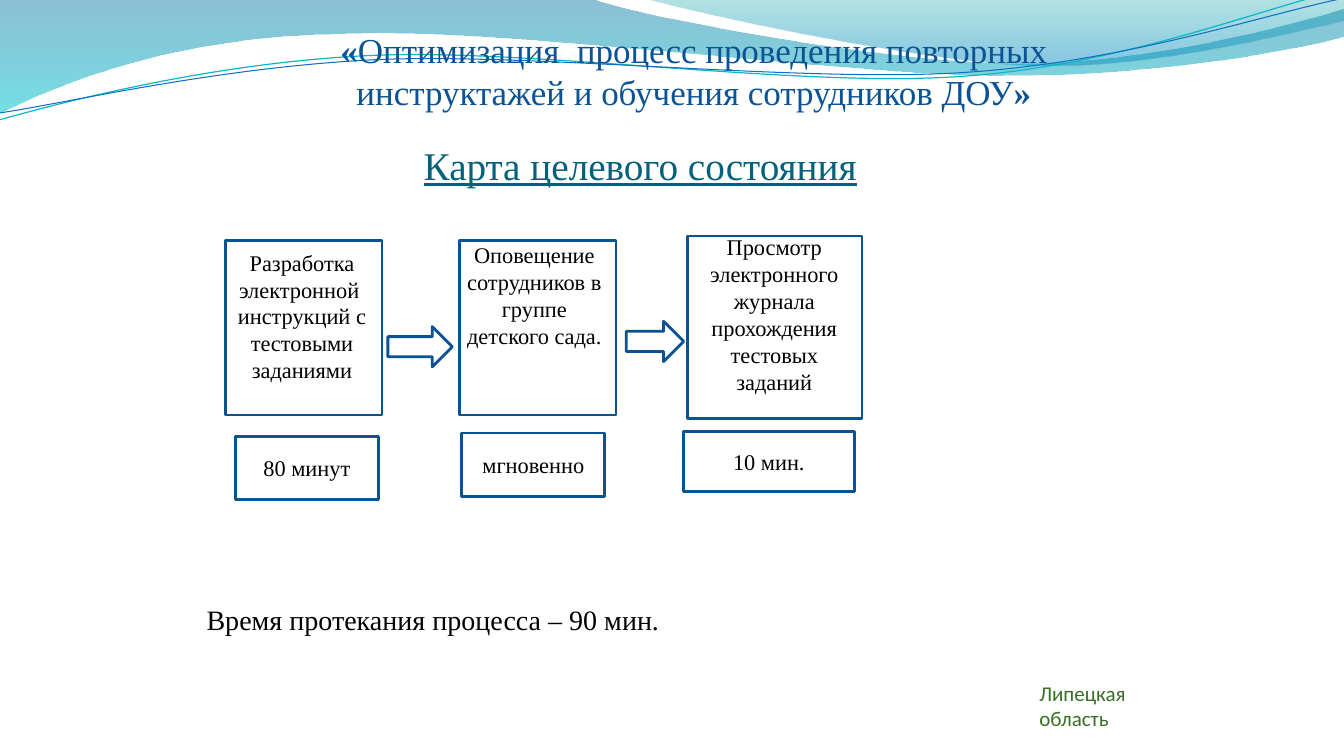
import math
from dataclasses import dataclass

from lxml import etree
from pptx import Presentation
from pptx import util as u
from pptx.dml.color import RGBColor
from pptx.enum import shapes, text
from pptx.oxml.ns import qn


@dataclass(frozen=True)
class Theme:
    serif: str = "Times New Roman"
    sans: str = "Calibri"
    ink: str = "000000"
    frame: str = "0B5292"
    title: str = "0B5394"
    heading: str = "04617B"
    region: str = "387026"
    paper: str = "FFFFFF"
    title_size: int = 25
    heading_size: int = 28
    total_size: int = 20
    step_size: int = 16
    region_size: int = 15
    frame_width: int = 2


THEME = Theme()
WIDTH, HEIGHT = u.Inches(13.33), u.Inches(7.5)
WAVE_CELL = u.Inches(1)  # grid unit of the wave points
STRAND_TILT = 357.3

# Waves: start point, then lines (2 numbers) and cubic curves (6 numbers)
BANDS = [
    ([(0, 0), (5.87, -0.01),
      (6.34, 0.17, 8.85, 0.63, 10.11, 0.63),
      (11.38, 0.63, 12.78, 0.26, 13.33, 0.09), (13.35, 0.36),
      (13.11, 0.44, 11.6, 0.76, 9.94, 0.75),
      (8.29, 0.75, 5.09, 0.28, 3.43, 0.34),
      (1.72, 0.36, 0.61, 0.83, -0.01, 1.13), (0, 0)],
     [(0, "0074A1", 45), (1, "00C6CF", 55)]),
    ([(6.39, -0.01),
      (6.79, 0.11, 9.09, 0.62, 10.25, 0.65),
      (11.41, 0.69, 12.82, 0.32, 13.33, 0.21), (13.33, 0), (6.39, -0.01)],
     [(0, "00A1A9", 30), (0.8, "008BBF", 45)]),
]
# Strands: points, centre of the tilt, colour, width
STRANDS = [
    ([(-0.01, 1.19),
      (0.64, 1.01, 2.11, 0.62, 3.69, 0.55),
      (5.27, 0.48, 7.9, 0.87, 9.5, 0.76),
      (11.1, 0.66, 12.52, 0.08, 13.31, -0.1)], (6.65, 0.57), "0AB8BF", 0.85),
    ([(0, 1.12),
      (0.63, 1.03, 2.18, 0.66, 3.78, 0.59),
      (5.37, 0.53, 7.96, 0.82, 9.55, 0.72),
      (11.15, 0.62, 12.55, 0.14, 13.34, -0.02)], (6.67, 0.59), "0F6FC6", 0.75),
]

# Process: places are percent of slide width and height
STEPS = [
    ("Разработка электронной  инструкций с тестовыми заданиями",
     (16.8, 31.83, 11.63, 23.07), (16.62, 32.27, 11.7, 19.33)),
    ("Оповещение сотрудников в группе детского сада.",
     (34.21, 31.83, 11.63, 23.07), (33.61, 31.23, 12.3, 20.53)),
    ("Просмотр электронного журнала прохождения тестовых заданий",
     (51.16, 31.23, 12.98, 24.13), (51.16, 30.23, 12.9, 22.93)),
]
ARROWS = [(28.86, 43.2, 4.8, 5.33), (46.59, 42.5, 4.28, 5.33)]
DURATIONS = [
    ("мгновенно", (34.36, 57.28, 10.65, 8.4)),
    ("10 мин.", (50.83, 57.07, 12.75, 7.9)),
    ("80 минут", (17.51, 57.69, 10.65, 8.4)),
]


def place(left, top, width, height):
    return [round(share * side / 100) for share, side in
            zip((left, top, width, height), (WIDTH, HEIGHT) * 2)]


def apply(target, formats):
    for name, value in formats.items():
        setattr(target, name, value)


def write(shape, paragraphs, size, color, face=THEME.serif,
          align=text.PP_ALIGN.CENTER, anchor=text.MSO_ANCHOR.TOP, **extra):
    """Each paragraph is a list of (words, bold) runs."""
    frame = shape.text_frame
    apply(frame, {"word_wrap": True, "vertical_anchor": anchor})
    for index, runs in enumerate(paragraphs):
        paragraph = frame.add_paragraph() if index else frame.paragraphs[0]
        paragraph.alignment = align
        for words, bold in runs:
            run = paragraph.add_run()
            run.text = words
            apply(run.font, {"name": face, "size": u.Pt(size), "bold": bold, **extra})
            run.font.color.rgb = RGBColor.from_string(color)


def add_label(slide, spot, runs, size, color, **formats):
    label = slide.shapes.add_textbox(*place(*spot))
    write(label, [runs], size, color, **formats)
    label.text_frame.auto_size = text.MSO_AUTO_SIZE.SHAPE_TO_FIT_TEXT


def set_line(shape, color, width):
    shape.shadow.inherit = False
    shape.line.color.rgb = RGBColor.from_string(color)
    shape.line.width = u.Pt(width)


def add_outline(slide, spot, kind=shapes.MSO_SHAPE.RECTANGLE):
    outline = slide.shapes.add_shape(kind, *place(*spot))
    outline.fill.background()
    set_line(outline, THEME.frame, THEME.frame_width)
    return outline


def add_wave(slide, segments, close, center=(0, 0), tilt=0):
    """Draw the segments; a tilted wave is laid level, then rotated."""
    cos, sin = math.cos(math.radians(-tilt)), math.sin(math.radians(-tilt))
    points = []
    for segment in segments:
        for x, y in zip(segment[::2], segment[1::2]):
            dx, dy = x - center[0], y - center[1]
            points.append((round((center[0] + cos * dx - sin * dy) * WAVE_CELL),
                           round((center[1] + sin * dx + cos * dy) * WAVE_CELL)))
    builder = slide.shapes.build_freeform(*points[0], scale=1.0)
    builder.add_line_segments(points[1:], close=close)
    wave = builder.convert_to_shape()
    wave.shadow.inherit = False
    wave.rotation = tilt
    # Join each three points of a curve into one cubic segment
    lines = iter(wave._element.spPr.findall(".//" + qn("a:lnTo")))
    for segment in segments[1:]:
        first = next(lines)
        if len(segment) == 6:
            first.tag = qn("a:cubicBezTo")
            for line in (next(lines), next(lines)):
                first.append(line[0])
                line.getparent().remove(line)
    return wave


def add_band(slide, segments, stops):
    band = add_wave(slide, segments, close=True)
    band.line.fill.background()
    band.fill.gradient()
    band.fill.gradient_angle = 270
    for stop, (position, color, _) in zip(band.fill.gradient_stops, stops):
        stop.position = position
        stop.color.rgb = RGBColor.from_string(color)
    # Opacity of each gradient stop
    tints = band._element.spPr.findall(".//" + qn("a:srgbClr"))
    for tint, (_, _, opacity) in zip(tints, stops):
        etree.SubElement(tint, qn("a:alpha")).set("val", str(opacity * 1000))


def add_strand(slide, segments, center, color, width):
    strand = add_wave(slide, segments, False, center, STRAND_TILT)
    strand.fill.background()
    set_line(strand, color, width)


def add_region(slide):
    region = slide.shapes.add_shape(shapes.MSO_SHAPE.RECTANGLE,
                                    *place(76.59, 89.33, 8.93, 8.13))
    region.shadow.inherit = False
    region.fill.solid()
    region.fill.fore_color.rgb = RGBColor.from_string(THEME.paper)
    region.line.fill.background()
    write(region, [[("Липецкая", False)], [("область", False)]], THEME.region_size,
          THEME.region, face=THEME.sans, align=text.PP_ALIGN.LEFT)


def main():
    deck = Presentation()
    apply(deck, {"slide_width": WIDTH, "slide_height": HEIGHT})
    slide = deck.slides.add_slide(deck.slide_layouts[6])

    # Wave decoration
    for band in BANDS:
        add_band(slide, *band)
    for strand in STRANDS:
        add_strand(slide, *strand)

    # Total time
    add_label(slide, (14.63, 79.07, 38.93, 5.87),
              [("Время протекания процесса – 90 мин.", False)],
              THEME.total_size, THEME.ink, align=text.PP_ALIGN.LEFT)

    # Process frames, arrows, durations and step names
    for _, spot, _ in STEPS:
        add_outline(slide, spot)
    for spot in ARROWS:
        add_outline(slide, spot, shapes.MSO_SHAPE.RIGHT_ARROW)
    for words, spot in DURATIONS:
        write(add_outline(slide, spot), [[(words, False)]], THEME.step_size,
              THEME.ink, anchor=text.MSO_ANCHOR.MIDDLE)
    for words, _, spot in STEPS:
        add_label(slide, spot, [(words, False)], THEME.step_size, THEME.ink)

    # Title, heading and region
    add_label(slide, (21.13, 3.07, 60.99, 12.53),
              [("«", True),
               ("Оптимизация  процесс проведения повторных инструктажей "
                "и обучения сотрудников ДОУ", False),
               ("»", True)], THEME.title_size, THEME.title)
    add_label(slide, (22.58, 18, 50.11, 7.6), [("Карта целевого состояния", False)],
              THEME.heading_size, THEME.heading, underline=True)
    add_region(slide)

    deck.save("out.pptx")


if __name__ == "__main__":
    main()
